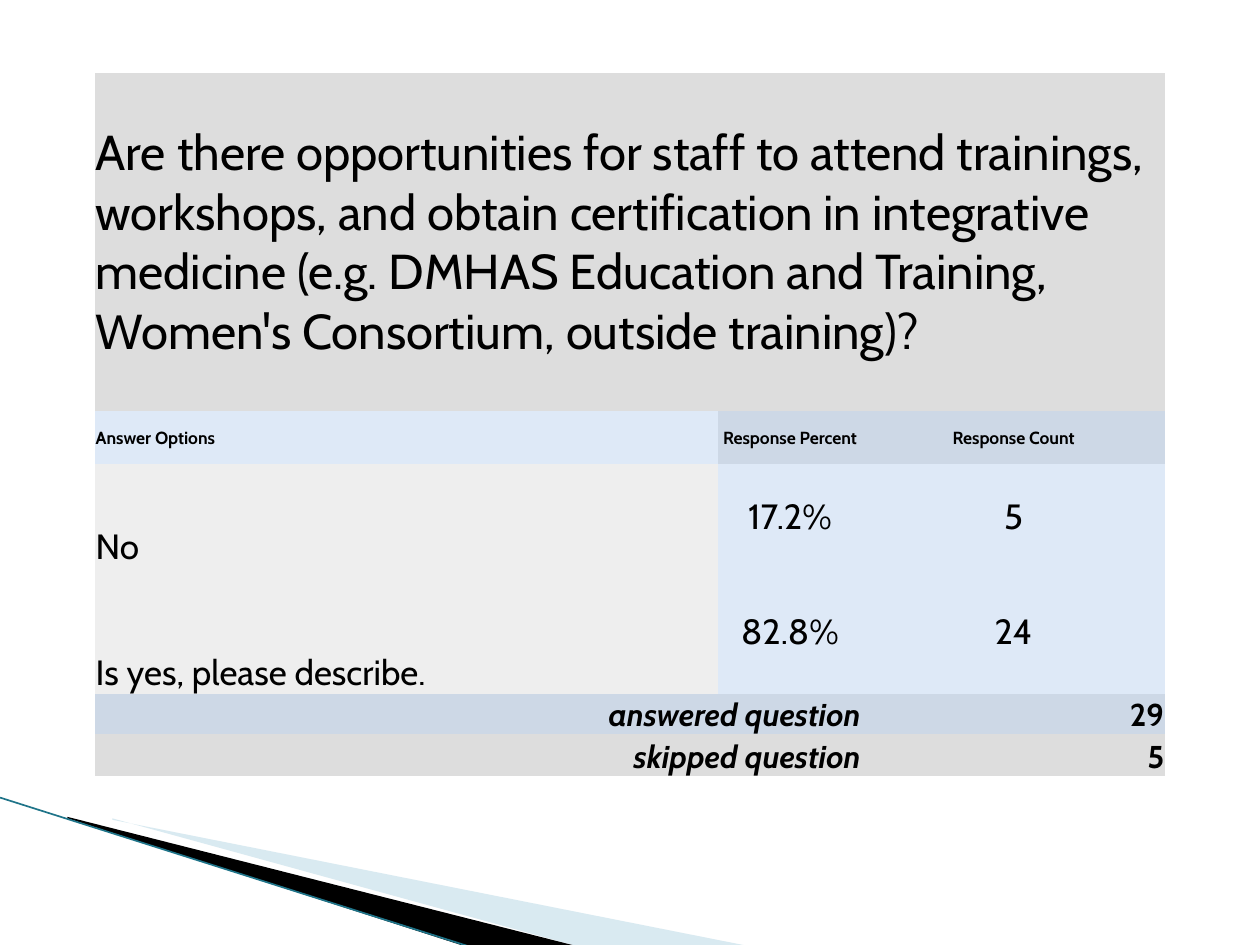
from dataclasses import dataclass

import pptx
import pptx.dml.color
import pptx.enum.shapes
import pptx.enum.text
import pptx.oxml
import pptx.oxml.ns
import pptx.util
from pptx.util import Inches

ALIGN = pptx.enum.text.PP_ALIGN
ANCHOR = pptx.enum.text.MSO_ANCHOR
NO_GRID_STYLE = "{2D5ABB26-0587-4C30-8999-92F81FD0307C}"


@dataclass(frozen=True)
class Theme:
    font: str = "Cabin"
    text: str = "000000"
    gray: str = "DDDDDD"
    light_gray: str = "EEEEEE"
    blue: str = "CDD8E6"
    light_blue: str = "DEE9F7"
    wedge: str = "A0CBDC"
    edge: str = "1F7489"
    question_size: int = 28
    header_size: int = 10
    answer_size: int = 20
    total_size: int = 18


THEME = Theme()


def rgb(value):
    return pptx.dml.color.RGBColor.from_string(value)


def set_attributes(target, values):
    for name, value in values.items():
        setattr(target, name, value)


def add_wedge(slide, points, color, opacity=100):
    """Draw a closed, unlined outline through points given in inches."""
    corners = [(Inches(x), Inches(y)) for x, y in points]
    builder = slide.shapes.build_freeform(*corners[0])
    builder.add_line_segments(corners[1:], close=True)
    shape = builder.convert_to_shape()
    shape.shadow.inherit = False
    shape.line.fill.background()
    shape.fill.solid()
    shape.fill.fore_color.rgb = rgb(color)
    if opacity < 100:
        color_element = shape.fill._xPr.find(".//" + pptx.oxml.ns.qn("a:srgbClr"))
        alpha = pptx.oxml.parse_xml(
            f'<a:alpha {pptx.oxml.ns.nsdecls("a")} val="{opacity * 1000}"/>')
        color_element.append(alpha)


def add_corner_decoration(slide, left, top, width, height):
    def place(x, y):
        return left + x * width, top + y * height

    pale = [(0.15, 0.15), (1, 1), (0.77, 1), (0.15, 0.14)]
    dark = [(0.09, 0.13), (0.77, 1), (0.62, 1), (0.09, 0.14)]
    add_wedge(slide, [place(*point) for point in pale], THEME.wedge, 40)
    add_wedge(slide, [place(*point) for point in dark], THEME.text)
    start, end = place(0, 0), place(0.625, 1)
    connector = slide.shapes.add_connector(
        pptx.enum.shapes.MSO_CONNECTOR.STRAIGHT,
        *(Inches(value) for value in start + end))
    connector.line.color.rgb = rgb(THEME.edge)
    connector.line.width = pptx.util.Pt(0.95)
    connector._element.spPr.append(
        pptx.oxml.parse_xml(f'<a:effectLst {pptx.oxml.ns.nsdecls("a")}/>'))


def fill_cell(cell, text, color, size, align=ALIGN.LEFT, anchor=ANCHOR.MIDDLE,
              bold=False, italic=False):
    cell.fill.solid()
    cell.fill.fore_color.rgb = rgb(color)
    cell.vertical_anchor = anchor
    cell.text = text
    paragraph = cell.text_frame.paragraphs[0]
    paragraph.alignment = align
    font = paragraph.runs[0].font
    set_attributes(font, {"name": THEME.font, "size": pptx.util.Pt(size),
                          "bold": bold, "italic": italic})
    font.color.rgb = rgb(THEME.text)


def add_survey_table(slide, left, top, width, height):
    column_shares = [2.34, 2.61, 1.14, 2.41]
    row_shares = [2.68, 0.42, 0.83, 1, 0.32, 0.33, 0.08]
    frame = slide.shapes.add_table(
        len(row_shares), len(column_shares),
        *(Inches(value) for value in (left, top, width, height)))
    table = frame.table
    set_attributes(table, {"first_row": False, "horz_banding": False})
    table._tbl.tblPr.find(pptx.oxml.ns.qn("a:tableStyleId")).text = NO_GRID_STYLE
    for column, share in zip(table.columns, column_shares):
        column.width = Inches(width * share / sum(column_shares))
    for row, share in zip(table.rows, row_shares):
        row.height = Inches(height * share / sum(row_shares))
    for cell in table.iter_cells():
        set_attributes(cell, {"margin_left": Inches(0.01), "margin_right": Inches(0.01),
                              "margin_top": Inches(0.01), "margin_bottom": 0})
        cell.text_frame.paragraphs[0].font.size = pptx.util.Pt(1)

    def span(row, last_column):
        table.cell(row, 0).merge(table.cell(row, last_column))
        return table.cell(row, 0)

    fill_cell(
        span(0, 3),
        "Are there opportunities for staff to attend trainings, workshops, and "
        "obtain certification in integrative medicine (e.g. DMHAS Education and "
        "Training, Women's Consortium, outside training)?",
        THEME.gray, THEME.question_size)

    fill_cell(span(1, 1), "Answer Options", THEME.light_blue, THEME.header_size, bold=True)
    for column, heading in enumerate(["Response Percent", "Response Count"], start=2):
        fill_cell(table.cell(1, column), heading, THEME.blue, THEME.header_size,
                  ALIGN.CENTER, bold=True)

    answers = [("No", "17.2%", "5"), ("Is yes, please describe.", "82.8%", "24")]
    for row, (answer, *values) in enumerate(answers, start=2):
        fill_cell(span(row, 1), answer, THEME.light_gray, THEME.answer_size,
                  anchor=ANCHOR.BOTTOM)
        for column, value in enumerate(values, start=2):
            fill_cell(table.cell(row, column), value, THEME.light_blue,
                      THEME.answer_size, ALIGN.CENTER)

    totals = [("answered question", "29", THEME.blue),
              ("skipped question", "5", THEME.gray)]
    for row, (label, count, color) in enumerate(totals, start=4):
        fill_cell(span(row, 2), label, color, THEME.total_size, ALIGN.RIGHT,
                  ANCHOR.BOTTOM, bold=True, italic=True)
        fill_cell(table.cell(row, 3), count, color, THEME.total_size, ALIGN.RIGHT,
                  ANCHOR.BOTTOM, bold=True)


def main():
    presentation = pptx.Presentation()
    set_attributes(presentation, {"slide_width": Inches(10), "slide_height": Inches(7.5)})
    slide = presentation.slides.add_slide(presentation.slide_layouts[6])
    add_corner_decoration(slide, 0, 6.33, 5.95, 1.18)
    add_survey_table(slide, 0.75, 0.58, 8.5, 5.66)
    presentation.save("out.pptx")


if __name__ == "__main__":
    main()
